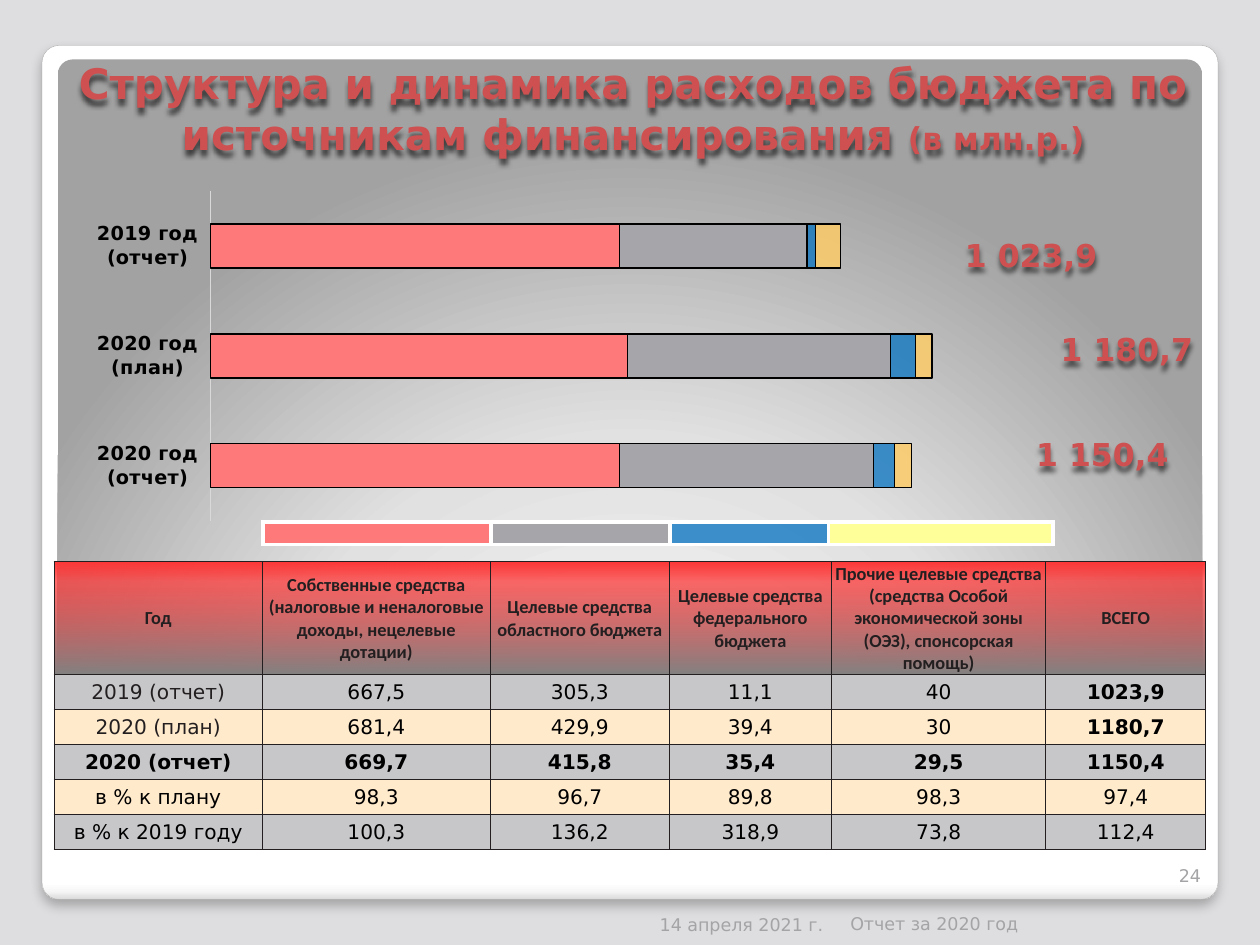
from lxml.etree import SubElement
from pptx import Presentation
from pptx.chart.data import CategoryChartData
from pptx.dml.color import RGBColor
from pptx.enum.chart import XL_CHART_TYPE, XL_TICK_LABEL_POSITION, XL_TICK_MARK
from pptx.enum.shapes import MSO_SHAPE
from pptx.enum.text import MSO_ANCHOR, PP_ALIGN
from pptx.oxml import parse_xml
from pptx.oxml.ns import nsdecls, qn
from pptx.util import Pt

COLORS = {
    "page": "DEDEE0", "accent": "CE5050", "muted": "A4A4A6", "edge": "A4A4A4",
    "ink": "231F20", "black": "000000", "white": "FFFFFF", "axis": "D9D9D9",
    "own": "FE7979", "regional": "A5A5AA", "federal": "0070C0",
    "other": "FFCC66", "other_key": "FFFF99",
    "band_gray": "C7C7CA", "band_cream": "FFEACC",
}
FONT = "DejaVu Sans"
COLUMNS = [118.8, 130.4, 102.2, 92.8, 122.4, 91.4]
HEADER = [
    "Год",
    "Собственные средства (налоговые и неналоговые доходы, нецелевые дотации)",
    "Целевые средства областного бюджета",
    "Целевые средства федерального бюджета",
    "Прочие целевые средства (средства Особой экономической зоны (ОЭЗ), спонсорская помощь)",
    "ВСЕГО",
]
ROWS = [
    ["2019 (отчет)", "667,5", "305,3", "11,1", "40", "1023,9"],
    ["2020 (план)", "681,4", "429,9", "39,4", "30", "1180,7"],
    ["2020 (отчет)", "669,7", "415,8", "35,4", "29,5", "1150,4"],
    ["в % к плану", "98,3", "96,7", "89,8", "98,3", "97,4"],
    ["в % к 2019 году", "100,3", "136,2", "318,9", "73,8", "112,4"],
]
HEADER_STOPS = [(0, "828282", 100), (82, "FF3434", 72), (100, "FE3737", 100)]
FRAME_STOPS = [(0, "FFFFFF", 100), (98, "FFFFFF", 100), (99, "F7F7F7", 100), (100, "DADADA", 100)]
PANEL_STOPS = [(0, "FFFFFF", 100), (55, "E1E1E1", 100), (100, "A2A2A2", 100)]
GLOW = '<a:path path="circle"><a:fillToRect l="50000" t="175000" r="50000" b="-75000"/></a:path>'


def rgb(name):
    return RGBColor.from_string(COLORS[name])


def points(box):
    return [Pt(value) for value in box]


def linear(angle):
    return f'<a:lin ang="{angle * 60000}" scaled="0"/>'


def set_gradient(fill, properties, stops, direction):
    fill.solid()
    marks = "".join(
        f'<a:gs pos="{place * 1000}"><a:srgbClr val="{color}">'
        f'<a:alpha val="{alpha * 1000}"/></a:srgbClr></a:gs>'
        for place, color, alpha in stops)
    gradient = parse_xml(f'<a:gradFill {nsdecls("a")} rotWithShape="1">'
                         f'<a:gsLst>{marks}</a:gsLst>{direction}</a:gradFill>')
    properties.replace(properties.find(qn("a:solidFill")), gradient)


def set_fill(fill, properties, color, alpha=100):
    fill.solid()
    fill.fore_color.rgb = rgb(color)
    if alpha < 100:
        tone = properties.find(qn("a:solidFill"))[0]
        SubElement(tone, qn("a:alpha"), val=str(alpha * 1000))


def add_shadow(shape, alpha, blur, distance):
    shape.shadow.inherit = False
    effects = shape._element.spPr.find(qn("a:effectLst"))
    effects.append(parse_xml(
        f'<a:outerShdw {nsdecls("a")} blurRad="{Pt(blur)}" dist="{Pt(distance)}" '
        f'dir="5400000" algn="tl" rotWithShape="0"><a:srgbClr val="000000">'
        f'<a:alpha val="{alpha * 1000}"/></a:srgbClr></a:outerShdw>'))


def add_span(para, text, size, color, bold=False, font=FONT):
    span = para.add_run()
    span.text = text
    span.font.name, span.font.size, span.font.bold = font, Pt(size), bold
    span.font.color.rgb = rgb(color)


def add_label(page, box, text, size, color, align, bold=False):
    label = page.shapes.add_textbox(*points(box))
    frame = label.text_frame
    frame.word_wrap = True
    frame.vertical_anchor = MSO_ANCHOR.BOTTOM
    frame.paragraphs[0].alignment = align
    add_span(frame.paragraphs[0], text, size, color, bold)
    return label


def add_panel(page, box, stops, direction):
    panel = page.shapes.add_shape(MSO_SHAPE.ROUNDED_RECTANGLE, *points(box))
    panel.adjustments[0] = 0.02
    panel.shadow.inherit = False
    set_gradient(panel.fill, panel._element.spPr, stops, direction)
    panel.line.fill.background()
    return panel


def add_backdrop(page):
    page.background.fill.solid()
    page.background.fill.fore_color.rgb = rgb("page")
    frame = add_panel(page, (24, 26, 672, 488), FRAME_STOPS, linear(90))
    frame.line.color.rgb = rgb("edge")
    frame.line.width = Pt(0.16)
    add_shadow(frame, 25, 6, 4)
    add_panel(page, (33, 34, 654, 432), PANEL_STOPS, GLOW)


def place_title(page, box):
    title = page.shapes.title
    page.shapes._spTree.append(title._element)
    title.left, title.top, title.width, title.height = points(box)
    frame = title.text_frame
    frame.word_wrap = True
    frame.vertical_anchor = MSO_ANCHOR.BOTTOM
    para = frame.paragraphs[0]
    para.alignment = PP_ALIGN.CENTER
    add_span(para, "Структура и динамика расходов бюджета по источникам финансирования ", 24, "accent", True)
    add_span(para, "(в млн.р.)", 18, "accent", True)
    add_shadow(title, 60, 3, 3)


def add_footer(page):
    add_label(page, (657.4, 481, 36, 28.8), "24", 10, "muted", PP_ALIGN.RIGHT)
    add_label(page, (297.4, 509, 180, 28.8), "14 апреля 2021 г.", 10, "muted", PP_ALIGN.RIGHT)
    add_label(page, (478.8, 508.3, 180, 28.8), "Отчет за 2020 год", 10, "muted", PP_ALIGN.LEFT)


def set_plot_box(chart, box):
    sizes = "".join(f'<c:{key} val="{value}"/>' for key, value in zip("xywh", box))
    layout = parse_xml(
        f'<c:layout {nsdecls("c")}><c:manualLayout><c:layoutTarget val="inner"/>'
        f'<c:xMode val="edge"/><c:yMode val="edge"/>{sizes}</c:manualLayout></c:layout>')
    area = chart._chartSpace.chart.plotArea
    for old in area.findall(qn("c:layout")):
        area.remove(old)
    area.insert(0, layout)


def add_sources_chart(page, box):
    data = CategoryChartData()
    data.categories = ["2020 год (отчет)", "2020 год (план)", "2019 год (отчет)"]
    for number, values in enumerate([(98, 100, 98), (61, 63, 45), (5, 6, 2), (4, 4, 6)], 1):
        data.add_series(f"Series {number}", values)
    chart = page.shapes.add_chart(XL_CHART_TYPE.BAR_STACKED, *points(box), data).chart
    chart.has_title = chart.has_legend = False
    chart.font.name, chart.font.size = FONT, Pt(10)
    chart.font.color.rgb = rgb("black")
    plot = chart.plots[0]
    plot.gap_width, plot.overlap, plot.vary_by_categories = 150, 100, False
    for series, (color, alpha) in zip(plot.series, [("own", 100), ("regional", 100), ("federal", 73), ("other", 82)]):
        set_fill(series.format.fill, series._element.spPr, color, alpha)
        series.format.line.color.rgb = rgb("black")
        series.format.line.width = Pt(0.75)
    years = chart.category_axis
    years.major_tick_mark = XL_TICK_MARK.NONE
    years.tick_label_position = XL_TICK_LABEL_POSITION.LOW
    years.format.line.color.rgb = rgb("axis")
    years.format.line.width = Pt(0.75)
    font = years.tick_labels.font
    font.name, font.size, font.bold = FONT, Pt(11), True
    font.color.rgb = rgb("black")
    scale = chart.value_axis
    scale.minimum_scale, scale.maximum_scale = 0, 205
    scale.has_major_gridlines = scale.visible = False
    set_plot_box(chart, (0.137, 0.034, 0.749, 0.692))


def add_totals(page):
    for text, box in [("1 180,7", (598.3, 185, 91.4, 28.8)),
                      ("1 150,4", (578.9, 244.8, 102.2, 28.8)),
                      ("1 023,9", (541.4, 131, 95.8, 28.8))]:
        add_shadow(add_label(page, box, text, 18, "accent", PP_ALIGN.CENTER, True), 60, 3, 3)


def add_grid(page, left, top, widths, heights):
    shape = page.shapes.add_table(len(heights), len(widths),
                                  *points((left, top, sum(widths), sum(heights))))
    table = shape.table
    table.first_row = table.horz_banding = False
    for column, width in zip(table.columns, widths):
        column.width = Pt(width)
    for row, height in zip(table.rows, heights):
        row.height = Pt(height)
    return table


def format_cell(cell, border, width):
    cell.margin_left = cell.margin_right = cell.margin_top = Pt(0.72)
    cell.margin_bottom = 0
    cell.vertical_anchor = MSO_ANCHOR.MIDDLE
    for index, side in enumerate(("lnL", "lnR", "lnT", "lnB")):
        cell._tc.get_or_add_tcPr().insert(index, parse_xml(
            f'<a:{side} {nsdecls("a")} w="{Pt(width)}"><a:solidFill>'
            f'<a:srgbClr val="{COLORS[border]}"/></a:solidFill></a:{side}>'))


def add_budget_table(page, left, top):
    table = add_grid(page, left, top, COLUMNS, [64.4] + [20] * len(ROWS))
    for row, texts in enumerate([HEADER] + ROWS):
        for column, text in enumerate(texts):
            cell = table.cell(row, column)
            format_cell(cell, "ink", 0.75)
            para = cell.text_frame.paragraphs[0]
            para.alignment = PP_ALIGN.CENTER
            properties = cell._tc.tcPr
            if row == 0:
                set_gradient(cell.fill, properties, HEADER_STOPS, linear(270))
                add_span(para, text, 10.5, "ink", True, "Calibri")
            else:
                set_fill(cell.fill, properties, "band_gray" if row % 2 else "band_cream")
                bold = row == 3 or (row < 3 and column == 5)
                add_span(para, text, 11.5, "ink" if column == 0 and row < 3 else "black", bold)


def add_color_key(page, left, top):
    table = add_grid(page, left, top, [130.4, 102.2, 90.7, 128.2], [13])
    for column, (color, alpha) in enumerate([("own", 100), ("regional", 100), ("federal", 74), ("other_key", 100)]):
        cell = table.cell(0, column)
        format_cell(cell, "white", 2.25)
        set_fill(cell.fill, cell._tc.tcPr, color, alpha)
        SubElement(cell.text_frame.paragraphs[0]._p, qn("a:endParaRPr"), sz="600")


def main():
    deck = Presentation()
    deck.slide_width, deck.slide_height = Pt(720), Pt(540)
    page = deck.slides.add_slide(deck.slide_layouts[5])
    add_backdrop(page)
    place_title(page, (36.7, 37.4, 650.2, 56.9))
    add_footer(page)
    add_sources_chart(page, (31, 100, 652.3, 272.2))
    add_totals(page)
    add_budget_table(page, 31, 321)
    add_color_key(page, 150.3, 298.3)
    deck.save("out.pptx")


if __name__ == "__main__":
    main()
